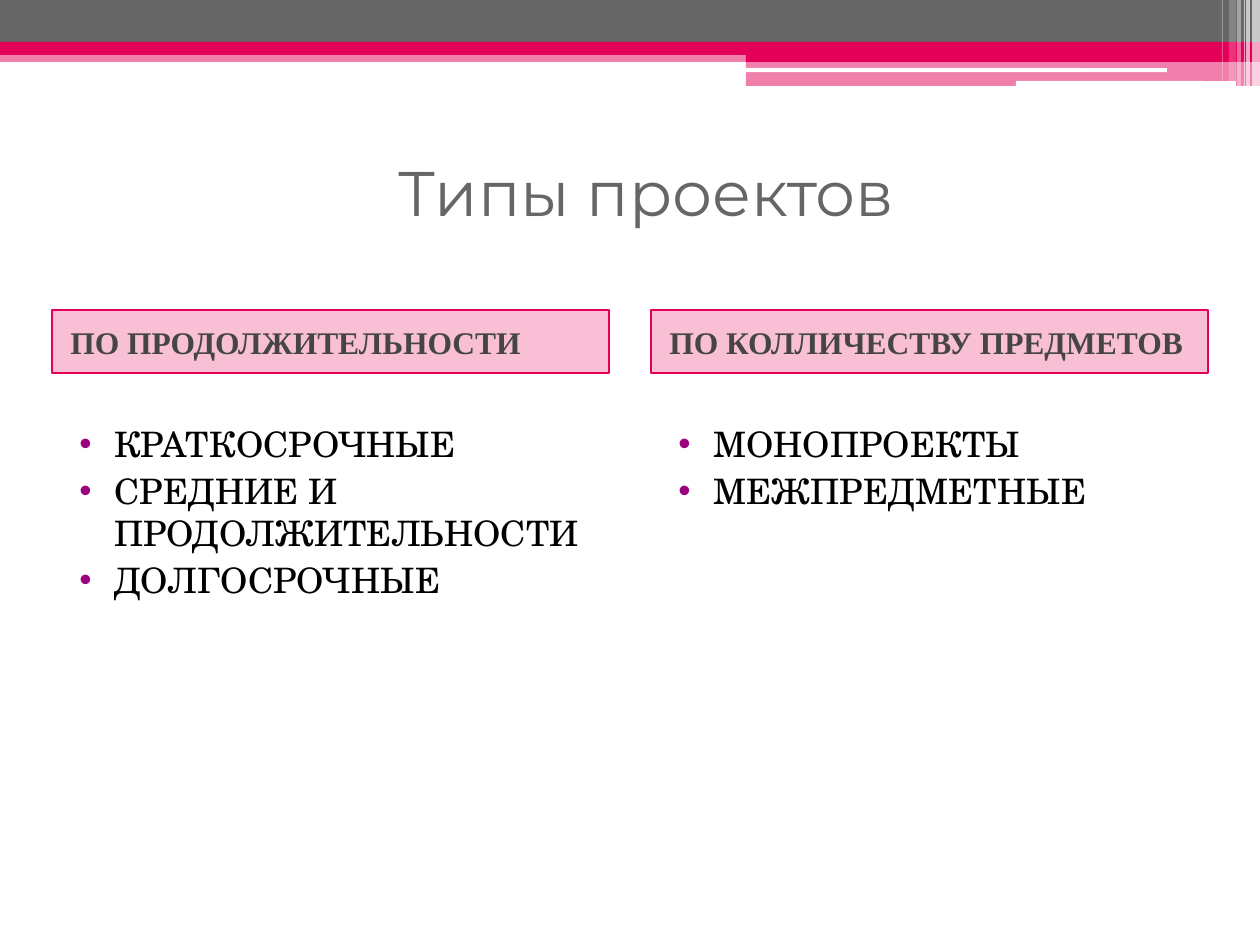
from lxml import etree
from pptx import Presentation
from pptx.dml.color import RGBColor
from pptx.enum.shapes import MSO_SHAPE
from pptx.enum.text import MSO_ANCHOR, PP_ALIGN
from pptx.oxml.ns import qn
from pptx.util import Emu, Pt

RECT = MSO_SHAPE.RECTANGLE
ROUNDED = MSO_SHAPE.ROUNDED_RECTANGLE
MIDDLE = MSO_ANCHOR.MIDDLE
TOP = MSO_ANCHOR.TOP
LEFT = PP_ALIGN.LEFT
CENTER = PP_ALIGN.CENTER

PX_PER_INCH = 126
PINK, GRAY, WHITE = "E40059", "666666", "FFFFFF"
TITLE_FONT = {"name": "Montserrat", "size": Pt(36), "bold": False}
HEADING_FONT = {"name": "Times New Roman", "size": Pt(18), "bold": True}
LIST_FONT = {"name": "TeX Gyre Schola", "size": Pt(20), "bold": False}

COLUMNS = [
    ("ПО ПРОДОЛЖИТЕЛЬНОСТИ",
     ["КРАТКОСРОЧНЫЕ", "СРЕДНИЕ И ПРОДОЛЖИТЕЛЬНОСТИ", "ДОЛГОСРОЧНЫЕ"]),
    ("ПО КОЛЛИЧЕСТВУ ПРЕДМЕТОВ", ["МОНОПРОЕКТЫ", "МЕЖПРЕДМЕТНЫЕ"]),
]


def px(value):
    return Emu(round(value * 914400 / PX_PER_INCH))


def color(value):
    return RGBColor.from_string(value)


def set_all(target, values):
    for name, value in values.items():
        setattr(target, name, value)


def add_block(page, box, fill, opacity=100, kind=RECT):
    shape = page.shapes.add_shape(kind, *map(px, box))
    shape.shadow.inherit = False
    shape.fill.solid()
    shape.fill.fore_color.rgb = color(fill)
    shape.line.fill.background()
    if opacity < 100:
        tint = shape.fill._xPr.find(qn("a:solidFill"))[0]
        etree.SubElement(tint, qn("a:alpha"), val=str(opacity * 1000))
    return shape


def write(para, text, font, text_color, align=LEFT):
    para.alignment = align
    span = para.add_run()
    span.text = text
    set_all(span.font, font)
    span.font.color.rgb = color(text_color)


def set_indent(para, margin, indent=0, bullet_color=None):
    para.space_before = Pt(3)
    props = para._p.get_or_add_pPr()
    props.set("marL", str(px(margin)))
    props.set("indent", str(px(indent)))
    if bullet_color:
        tint = etree.SubElement(props, qn("a:buClr"))
        etree.SubElement(tint, qn("a:srgbClr"), val=bullet_color)
        etree.SubElement(props, qn("a:buFont"), typeface="Arial")
        etree.SubElement(props, qn("a:buChar"), char="•")


def add_banner(page, box):
    left, top, width, height = box
    split = 746
    wide = width - split
    bands = [
        (0, 50, width, 12, PINK, 50, RECT),
        (0, 0, width, 42, GRAY, 100, RECT),
        (0, 42, width, 13, PINK, 100, RECT),
        (split, 49, wide, 13, PINK, 100, RECT),
        (split, 61, wide, 25, PINK, 50, RECT),
        (split - 1, 68, 422, 4, WHITE, 100, ROUNDED),
        (1016, 81, 220, 5, WHITE, 100, ROUNDED),
    ]
    for x, y, w, h, fill, opacity, kind in bands:
        add_block(page, (left + x, top + y, w, h), fill, opacity, kind)
    stripes = [
        (8, 8, height, 65), (14, 4, height, 65), (16, 1, height, 60),
        (23, 4, height, 40), (31, 7, 81, 20), (38, 1, 81, 30),
    ]
    for offset, w, h, opacity in stripes:
        add_block(page, (left + width - offset, top, w, h), WHITE, opacity)


def place_title(page, box, text):
    title = page.shapes.title
    names = ("left", "top", "width", "height")
    set_all(title, dict(zip(names, map(px, box))))
    set_all(title.text_frame, {"vertical_anchor": MIDDLE, "word_wrap": True})
    write(title.text_frame.paragraphs[0], text, TITLE_FONT, GRAY, CENTER)


def add_column(page, box, heading, items):
    left, top, width, height = box
    bar_height = 63
    bar = add_block(page, (left, top, width, bar_height), PINK, 25)
    bar.line.color.rgb = color(PINK)
    bar.line.width = Pt(1)
    set_all(bar.text_frame, {"vertical_anchor": MIDDLE, "word_wrap": True})
    para = bar.text_frame.paragraphs[0]
    set_indent(para, 6)
    write(para, heading, HEADING_FONT, "454545")

    body = (left, top + bar_height, width, height - bar_height)
    frame = page.shapes.add_textbox(*map(px, body)).text_frame
    set_all(frame, {"word_wrap": True, "vertical_anchor": TOP, "margin_top": px(49)})
    for index, item in enumerate(items):
        para = frame.add_paragraph() if index else frame.paragraphs[0]
        set_indent(para, 50, -35, "9C007F")
        write(para, item, LIST_FONT, "000000")


def main():
    deck = Presentation()
    deck.slide_width, deck.slide_height = px(1260), px(945)
    page = deck.slides.add_slide(deck.slide_layouts[5])
    add_banner(page, (0, 0, 1260, 86))
    place_title(page, (69, 118, 1155, 147), "Типы проектов")
    margin, gap = 52, 42
    width = (1260 - 2 * margin - gap) // 2
    for index, (heading, items) in enumerate(COLUMNS):
        left = margin + index * (width + gap)
        add_column(page, (left, 310, width, 599), heading, items)
    deck.save("out.pptx")


if __name__ == "__main__":
    main()
